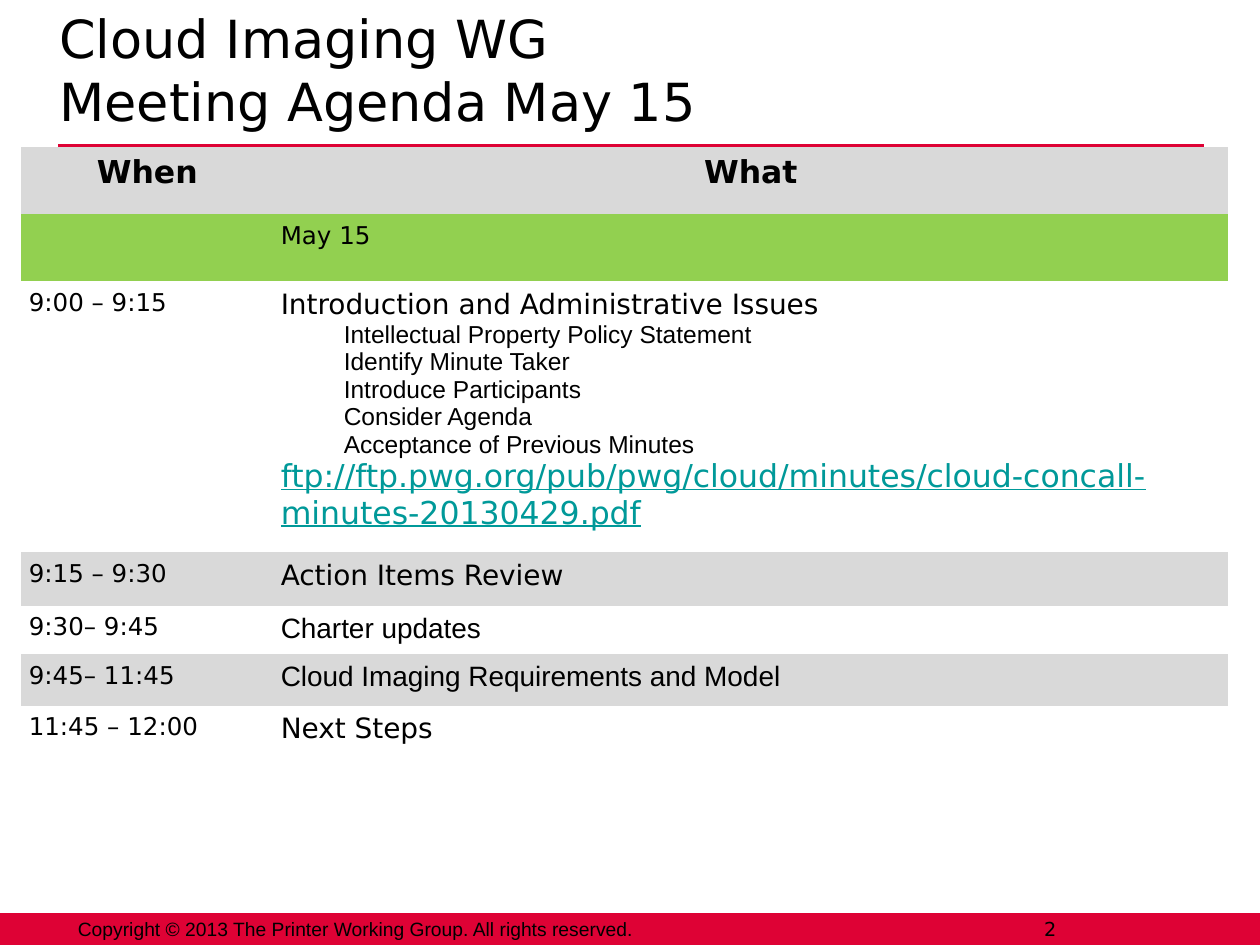
from dataclasses import dataclass

from pptx import Presentation
from pptx.dml.color import RGBColor
from pptx.enum import shapes, text
from pptx.oxml import parse_xml
from pptx.oxml.ns import nsdecls, qn
from pptx.util import Cm, Pt


@dataclass(frozen=True)
class Theme:
    """Colours, fonts and type sizes of the slide."""
    ink: str = "000000"
    red: str = "DE0235"
    grey: str = "D9D9D9"
    green: str = "92D050"
    white: str = "FFFFFF"
    link: str = "009999"
    sans: str = "DejaVu Sans"
    plain: str = "Arial"
    title: int = 30
    head: int = 18
    item: int = 16
    detail: int = 14
    footer: int = 11


THEME = Theme()
NO_GRID = "{2D5ABB26-0587-4C30-8999-92F81FD0307C}"
TOPICS = ["Intellectual Property Policy Statement", "Identify Minute Taker",
          "Introduce Participants", "Consider Agenda", "Acceptance of Previous Minutes"]
MINUTES = "ftp://ftp.pwg.org/pub/pwg/cloud/minutes/cloud-concall-minutes-20130429.pdf"
AGENDA = [
    (1.35, THEME.grey, "When", "What", THEME.sans),
    (1.35, THEME.green, "", "May 15", THEME.sans),
    (5.1, THEME.white, "9:00 – 9:15", "Introduction and Administrative Issues", THEME.sans),
    (1.07, THEME.grey, "9:15 – 9:30", "Action Items Review", THEME.sans),
    (0.84, THEME.white, "9:30– 9:45", "Charter updates", THEME.plain),
    (1.04, THEME.grey, "9:45– 11:45", "Cloud Imaging Requirements and Model", THEME.plain),
    (1.04, THEME.white, "11:45 – 12:00", "Next Steps", THEME.sans),
]


def write(para, words, size, face=THEME.sans, color=THEME.ink, align=text.PP_ALIGN.LEFT, indent=0):
    """Fill and format one paragraph."""
    para.text = words
    para.alignment = align
    properties = para._p.get_or_add_pPr()
    properties.set("marL", str(Cm(indent)))
    properties.set("indent", "0")
    para.font.size = Pt(size)
    para.font.name = face
    para.font.color.rgb = RGBColor.from_string(color)


def add_heading(page, left, top, width, height):
    """Place the title and the red rule below it."""
    title = page.shapes.title
    title.left, title.top, title.width, title.height = map(Cm, (left, top, width, height))
    frame = title.text_frame
    frame.auto_size = text.MSO_AUTO_SIZE.NONE
    frame.vertical_anchor = text.MSO_ANCHOR.TOP
    write(frame.paragraphs[0], "Cloud Imaging WG\vMeeting Agenda May 15", THEME.title, indent=0.1)
    rule_left, rule_top = left + 0.33, top + height + 0.13
    rule = page.shapes.add_connector(shapes.MSO_CONNECTOR.STRAIGHT, Cm(rule_left), Cm(rule_top),
                                     Cm(rule_left + 23.11), Cm(rule_top))
    rule.line.color.rgb = RGBColor.from_string(THEME.red)
    rule.line.width = Pt(3)
    rule._element.spPr.append(parse_xml(f"<a:effectLst {nsdecls('a')}/>"))


def add_agenda(page, left, top, width, height):
    """Place the agenda table with its shaded rows."""
    frame = page.shapes.add_table(len(AGENDA), 2, Cm(left), Cm(top), Cm(width), Cm(height))
    table = frame.table
    table.first_row = table.horz_banding = False
    table._tbl.tblPr.find(qn("a:tableStyleId")).text = NO_GRID
    time_width = 5.08
    table.columns[0].width = Cm(time_width)
    table.columns[1].width = Cm(width - time_width)
    for index, (row_height, fill, when, what, face) in enumerate(AGENDA):
        table.rows[index].height = Cm(row_height)
        heading = index == 0
        what_size = THEME.detail if index == 1 else THEME.item
        entries = [(when, THEME.detail, THEME.sans), (what, what_size, face)]
        for column, (words, size, cell_face) in enumerate(entries):
            cell = table.cell(index, column)
            cell.fill.solid()
            cell.fill.fore_color.rgb = RGBColor.from_string(fill)
            cell.margin_left = cell.margin_right = cell.margin_top = cell.margin_bottom = Cm(0.15)
            if words:
                para = cell.text_frame.paragraphs[0]
                write(para, words, THEME.head if heading else size, cell_face,
                      align=text.PP_ALIGN.CENTER if heading else text.PP_ALIGN.LEFT)
                para.font.bold = heading
    add_topics(table.cell(2, 1).text_frame)


def add_topics(frame):
    """List the opening topics and the address of the minutes."""
    for topic in TOPICS:
        para = frame.add_paragraph()
        para.level = 1
        write(para, topic, THEME.detail, THEME.plain, indent=1.27)
    para = frame.add_paragraph()
    write(para, MINUTES, THEME.head, color=THEME.link)
    para.font.underline = True


def add_footer(page, left, top, width, height):
    """Place the red band, the copyright line and the page number."""
    band = page.shapes.add_shape(shapes.MSO_SHAPE.RECTANGLE, Cm(left), Cm(top), Cm(width), Cm(height))
    band.shadow.inherit = False
    band.fill.solid()
    band.fill.fore_color.rgb = RGBColor.from_string(THEME.red)
    band.line.fill.background()
    notice = "Copyright © 2013 The Printer Working Group. All rights reserved."
    labels = [
        (1.47, 12.52, notice, THEME.plain, text.PP_ALIGN.LEFT, 0.1, 0, True),
        (20.8, 0.74, "2", THEME.sans, text.PP_ALIGN.CENTER, 0, 0.25, False),
    ]
    for offset, label_width, words, face, align, indent, margin, wrap in labels:
        box = page.shapes.add_textbox(Cm(left + offset), Cm(top - 0.05), Cm(label_width), Cm(0.71))
        frame = box.text_frame
        frame.word_wrap = wrap
        frame.vertical_anchor = text.MSO_ANCHOR.MIDDLE
        frame.margin_left = Cm(margin)
        frame.margin_right = Cm(margin or 0.1)
        frame.margin_top = frame.margin_bottom = 0
        write(frame.paragraphs[0], words, THEME.footer, face, align=align, indent=indent)


def main():
    """Build and save the agenda slide."""
    deck = Presentation()
    deck.slide_width, deck.slide_height = Cm(25.4), Cm(19.05)
    page = deck.slides.add_slide(deck.slide_layouts[5])
    add_footer(page, 0, 18.41, 25.4, 0.64)
    add_heading(page, 0.84, 0, 16.71, 2.82)
    add_agenda(page, 0.43, 2.97, 24.33, sum(row[0] for row in AGENDA))
    deck.save("out.pptx")


if __name__ == "__main__":
    main()
